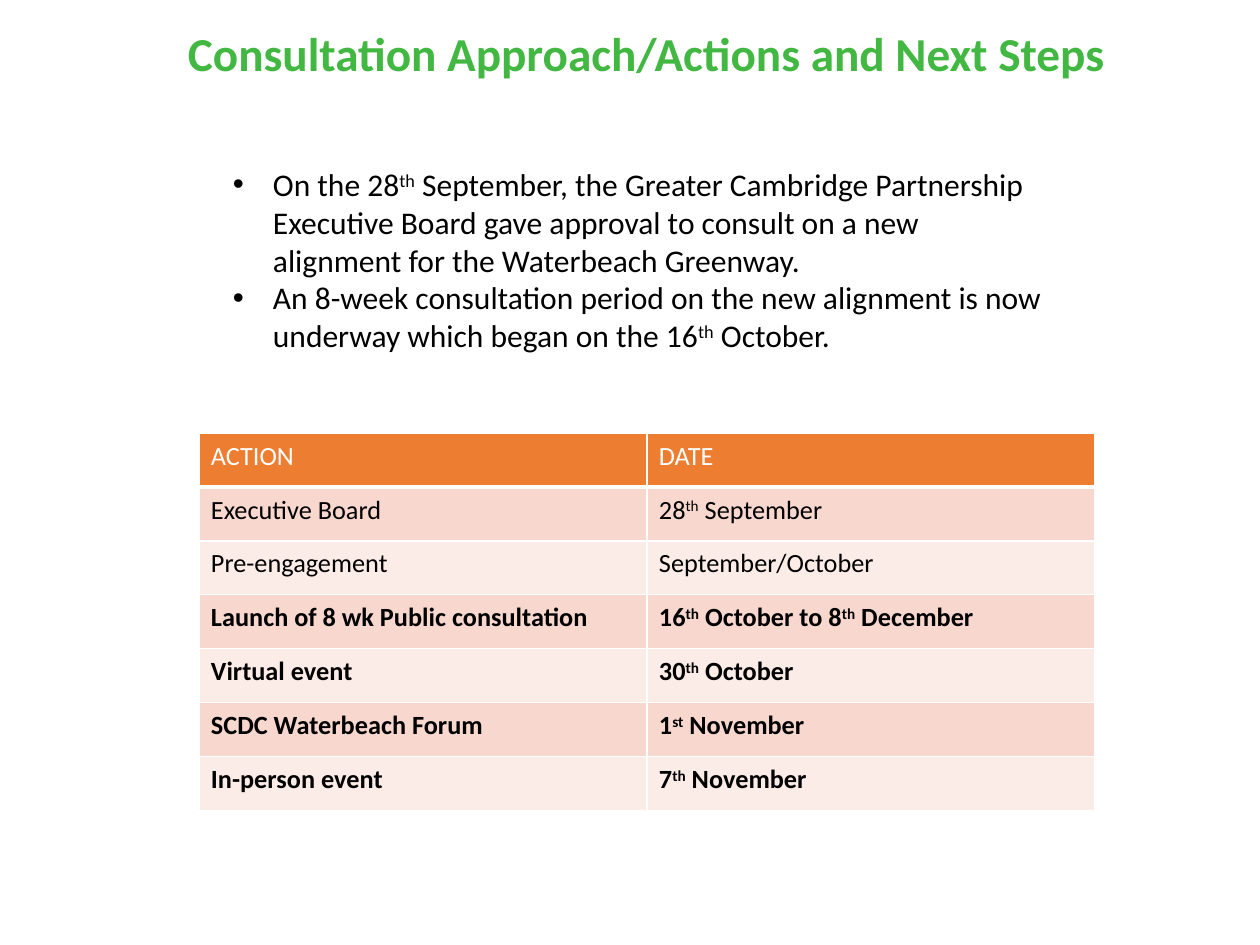
"""Build the consultation approach slide with its bullets and action table."""
from lxml import etree
from pptx import Presentation
from pptx.dml.color import RGBColor
from pptx.enum.text import MSO_ANCHOR, MSO_AUTO_SIZE, PP_ALIGN
from pptx.oxml.ns import qn
from pptx.util import Emu, Pt

TOP = MSO_ANCHOR.TOP
GROW = MSO_AUTO_SIZE.SHAPE_TO_FIT_TEXT
LEFT, CENTER = PP_ALIGN.LEFT, PP_ALIGN.CENTER
PX_PER_INCH = 94.5

TITLE = "Consultation Approach/Actions and Next Steps"
BULLETS = [
    "On the 28^th^ September, the Greater Cambridge Partnership Executive Board "
    "gave approval to consult on a new alignment for the Waterbeach Greenway.",
    "An 8-week consultation period on the new alignment is now underway "
    "which began on the 16^th^ October.",
]
HEADINGS = ("ACTION", "DATE")
ACTIONS = [
    ("Executive Board", "28^th^ September"),
    ("Pre-engagement", "September/October"),
    ("Launch of 8 wk Public consultation", "16^th^ October to 8^th^ December"),
    ("Virtual event", "30^th^ October"),
    ("SCDC Waterbeach Forum", "1^st^ November"),
    ("In-person event", "7^th^ November"),
]
FIRST_BOLD_ROW = 3

PAGE_SIZE = (1260, 945)
TITLE_AREA = (33, 17, 1227, 70)
BODY_AREA = (221, 158, 838, 203)
TABLE_ORIGIN = (199, 433)
COLUMN_WIDTH, ROW_HEIGHT = 448, 54
BULLET_INDENT = 40
MARGINS = {"margin_left": 12, "margin_right": 12, "margin_top": 7, "margin_bottom": 7}

THEME = {
    "title": {"name": "Calibri", "size": 36, "bold": True, "color": "42B741"},
    "body": {"name": "Calibri", "size": 24, "bold": False, "color": "000000"},
    "heading": {"name": "Calibri", "size": 20, "bold": False, "color": "FFFFFF"},
    "cell": {"name": "Calibri", "size": 20, "bold": False, "color": "000000"},
    "strong": {"name": "Calibri", "size": 20, "bold": True, "color": "000000"},
    "heading_fill": "ED7D31",
    "bands": ("F8D7CE", "FCECE8"),
    "border": "FFFFFF",
}


def px(length):
    """Turn px into EMU."""
    return Emu(round(length * 914400 / PX_PER_INCH))


def set_attributes(target, values):
    """Set each named value on the target."""
    for name, value in values.items():
        setattr(target, name, value)


def write(para, text, style, align=LEFT):
    """Write text in a style, raising the parts between carets."""
    para.alignment = align
    for index, part in enumerate(text.split("^")):
        span = para.add_run()
        span.text = part
        set_attributes(span.font, {
            "name": style["name"], "size": Pt(style["size"]), "bold": style["bold"]})
        span.font.color.rgb = RGBColor.from_string(style["color"])
        if index % 2:
            span.font._element.set("baseline", "30000")


def format_frame(frame):
    """Give a text frame its margins, wrapping and anchor."""
    set_attributes(frame, {name: px(value) for name, value in MARGINS.items()})
    set_attributes(frame, {"word_wrap": True, "vertical_anchor": TOP, "auto_size": GROW})


def add_bullet(para):
    """Give a paragraph a hanging round bullet."""
    properties = para._p.get_or_add_pPr()
    properties.set("marL", str(px(BULLET_INDENT)))
    properties.set("indent", str(-px(BULLET_INDENT)))
    etree.SubElement(properties, qn("a:buFont"), typeface="Arial")
    etree.SubElement(properties, qn("a:buChar"), char="•")


def add_borders(cell, bottom):
    """Draw the four cell borders, the lower one at its own width."""
    properties = cell._tc.get_or_add_tcPr()
    for side, width in (("L", 1), ("R", 1), ("T", 1), ("B", bottom)):
        line = etree.SubElement(properties, qn(f"a:ln{side}"), w=str(Pt(width)))
        fill = etree.SubElement(line, qn("a:solidFill"))
        etree.SubElement(fill, qn("a:srgbClr"), val=THEME["border"])


def add_title(page):
    """Place and write the title."""
    title = page.shapes.title
    set_attributes(title, dict(zip(("left", "top", "width", "height"), map(px, TITLE_AREA))))
    format_frame(title.text_frame)
    write(title.text_frame.paragraphs[0], TITLE, THEME["title"], CENTER)


def add_body(page):
    """Add the bulleted text."""
    frame = page.shapes.add_textbox(*map(px, BODY_AREA)).text_frame
    format_frame(frame)
    for index, text in enumerate(BULLETS):
        para = frame.add_paragraph() if index else frame.paragraphs[0]
        add_bullet(para)
        write(para, text, THEME["body"])


def add_actions(page):
    """Add the table of actions and dates."""
    rows = [HEADINGS, *ACTIONS]
    size = (COLUMN_WIDTH * len(HEADINGS), ROW_HEIGHT * len(rows))
    table = page.shapes.add_table(
        len(rows), len(HEADINGS), *map(px, TABLE_ORIGIN + size)).table
    for column in table.columns:
        column.width = px(COLUMN_WIDTH)
    for index, texts in enumerate(rows):
        table.rows[index].height = px(ROW_HEIGHT)
        if index == 0:
            style, color, bottom = THEME["heading"], THEME["heading_fill"], 3
        else:
            style = THEME["strong" if index >= FIRST_BOLD_ROW else "cell"]
            color, bottom = THEME["bands"][(index - 1) % 2], 1
        for cell, text in zip(table.rows[index].cells, texts):
            set_attributes(cell, {name: px(value) for name, value in MARGINS.items()})
            cell.vertical_anchor = TOP
            add_borders(cell, bottom)
            cell.fill.solid()
            cell.fill.fore_color.rgb = RGBColor.from_string(color)
            write(cell.text_frame.paragraphs[0], text, style)


def main():
    """Build and save the deck."""
    deck = Presentation()
    deck.slide_width, deck.slide_height = map(px, PAGE_SIZE)
    page = deck.slides.add_slide(deck.slide_layouts[5])
    add_title(page)
    add_actions(page)
    add_body(page)
    deck.save("out.pptx")


if __name__ == "__main__":
    main()
